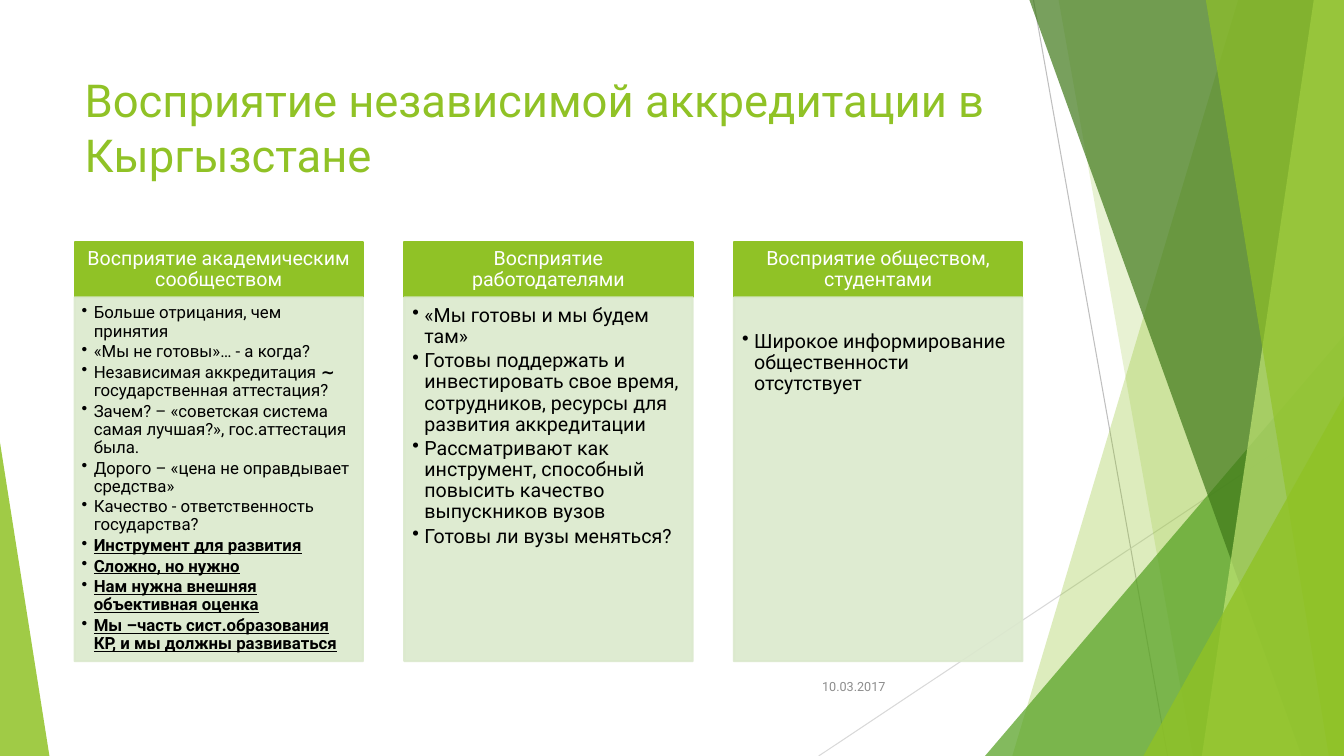
import pptx
import pptx.util
import pptx.dml.color
import pptx.enum.shapes
import pptx.enum.text
import pptx.oxml.ns
import lxml.etree

Inches, Pt = pptx.util.Inches, pptx.util.Pt
SHAPE = pptx.enum.shapes.MSO_SHAPE
ALIGN = pptx.enum.text.PP_ALIGN
ANCHOR = pptx.enum.text.MSO_ANCHOR
qn = pptx.oxml.ns.qn
rgb = pptx.dml.color.RGBColor.from_string

COLORS = {
    "lime": "90C226", "green": "54A021", "dark": "3F7819", "light": "C0E474",
    "panel": "DBE9CD", "white": "FFFFFF", "black": "000000",
    "date": "8C8C8C", "line1": "BFBFBF", "line2": "D9D9D9",
}


def paint(fill, color, alpha=100):
    """Solid fill with opacity in percent."""
    fill.solid()
    fill.fore_color.rgb = rgb(COLORS[color])
    if alpha < 100:
        clr = fill._xPr.find(qn("a:solidFill"))[0]
        lxml.etree.SubElement(clr, qn("a:alpha")).set("val", str(alpha * 1000))


def write(s, paragraphs, size, color, margins, anchor, align=ALIGN.LEFT):
    """Paragraphs are lists of (text, bold, underline) runs."""
    tf = s.text_frame
    tf.word_wrap = True
    tf.vertical_anchor = anchor
    tf.margin_left, tf.margin_top, tf.margin_right, tf.margin_bottom = map(Inches, margins)
    for i, runs in enumerate(paragraphs):
        p = tf.paragraphs[0] if i == 0 else tf.add_paragraph()
        p.alignment = align
        for text, bold, underline in runs:
            r = p.add_run()
            r.text = text
            r.font.name, r.font.size = "Roboto", Pt(size)
            r.font.bold, r.font.underline = bold, underline
            r.font.color.rgb = rgb(COLORS[color])
    return tf


prs = pptx.Presentation()
prs.slide_width, prs.slide_height = Inches(13.33), Inches(7.5)
shapes = prs.slides.add_slide(prs.slide_layouts[6]).shapes

# Thin background lines
for x1, y1, x2, y2, color in [(10.25, 0, 11.58, 7.5, "line1"),
                              (13.33, 4.03, 8.12, 7.5, "line2")]:
    line = shapes.add_connector(pptx.enum.shapes.MSO_CONNECTOR.STRAIGHT,
                                Inches(x1), Inches(y1), Inches(x2), Inches(y2))
    line.line.color.rgb = rgb(COLORS[color])
    line.line.width = Pt(0.75)
    lxml.etree.SubElement(line._element.spPr, qn("a:effectLst"))

# Facets: bands give top and bottom x of the left edge and run to the right side;
# triangles give left, top, width and apex position, and stand on the bottom
facets = [
    ("band", (12.28, 10.04), "lime", 30),
    ("band", (10.5, 11.83), "lime", 20),
    ("triangle", (9.77, 3.33, 3.56, 1), "green", 72),
    ("band", (10.21, 12.91), "dark", 70),
    ("band", (13.03, 11.92), "light", 70),
    ("band", (11.96, 13.18), "lime", 65),
    ("triangle", (11.34, 3.93, 1.99, 1), "lime", 80),
    ("triangle", (0, 4.39, 0.49, 0), "lime", 85),
]
for kind, geometry, color, alpha in facets:
    if kind == "band":
        top_x, bottom_x = geometry
        fb = shapes.build_freeform(Inches(top_x), 0)
        fb.add_line_segments([(Inches(x), Inches(y)) for x, y in
                              [(13.33, 0), (13.33, 7.5), (bottom_x, 7.5)]])
        s = fb.convert_to_shape()
    else:
        x, y, w, apex = geometry
        s = shapes.add_shape(SHAPE.ISOSCELES_TRIANGLE,
                             Inches(x), Inches(y), Inches(w), Inches(7.5 - y))
        s.adjustments[0] = apex
    s.shadow.inherit = False
    s.line.fill.background()
    paint(s.fill, color, alpha)

# Title
s = shapes.add_textbox(Inches(0.74), Inches(0.67), Inches(9.4), Inches(1.44))
write(s, [[("Восприятие независимой аккредитации в Кыргызстане", False, False)]],
      32.4, "lime", (0.1, 0.05, 0.1, 0.05), ANCHOR.TOP)

# Three columns: heading, text size, body margins, plain items, emphasised items
columns = [
    ("Восприятие академическим сообществом", 12, (0.07, 0.07, 0.09, 0.1), [
        "Больше отрицания, чем принятия",
        "«Мы не готовы»… - а когда?",
        "Независимая аккредитация ∼ государственная аттестация?",
        "Зачем? – «советская система самая лучшая?», гос.аттестация была.",
        "Дорого – «цена не оправдывает средства»",
        "Качество - ответственность государства?",
    ], [
        "Инструмент для развития",
        "Сложно, но нужно",
        "Нам нужна внешняя объективная оценка",
        "Мы –часть сист.образования КР, и мы должны развиваться",
    ]),
    ("Восприятие работодателями", 14, (0.08, 0.08, 0.11, 0.12), [
        "«Мы готовы и мы будем там»",
        "Готовы поддержать и инвестировать свое время, сотрудников, ресурсы "
        "для развития аккредитации",
        "Рассматривают как инструмент, способный повысить качество выпускников вузов",
        "Готовы ли вузы меняться?",
    ], []),
    ("Восприятие обществом, студентами", 14, (0.08, 0.34, 0.11, 0.12), [
        "Широкое информирование общественности отсутствует",
    ], []),
]
for i, (heading, size, margins, plain, strong) in enumerate(columns):
    x = 0.74 + 3.27 * i
    head = shapes.add_shape(SHAPE.RECTANGLE, Inches(x), Inches(2.4), Inches(2.86), Inches(0.55))
    body = shapes.add_shape(SHAPE.RECTANGLE, Inches(x), Inches(2.95), Inches(2.86), Inches(3.61))
    for s, color, alpha in [(head, "lime", 100), (body, "panel", 90)]:
        s.shadow.inherit = False
        s.line.width = Pt(1.5)
        paint(s.fill, color, alpha)
        paint(s.line.fill, color, alpha)

    tf = write(head, [[(heading, False, False)]], 14, "white",
               (0.11, 0.06, 0.11, 0.06), ANCHOR.MIDDLE, ALIGN.CENTER)
    tf.paragraphs[0].line_spacing = 0.9

    # The tilde sign is bold inside plain items
    items = []
    for text in plain:
        before, sign, after = text.partition("∼ ")
        items.append([(t, t == sign, False) for t in (before, sign, after) if t])
    items += [[(text, True, True)] for text in strong]
    tf = write(body, items, size, "black", margins, ANCHOR.TOP)
    for p in tf.paragraphs:
        p.line_spacing = 0.9
        p.space_after = Pt(size * 0.15)
        pPr = p._p.get_or_add_pPr()
        pPr.set("marL", str(Inches(0.12)))
        pPr.set("indent", str(-Inches(0.12)))
        lxml.etree.SubElement(pPr, qn("a:buChar")).set("char", "•")

# Date
s = shapes.add_textbox(Inches(7.88), Inches(6.61), Inches(1), Inches(0.4))
write(s, [[("10.03.2017", False, False)]], 9, "date",
      (0.1, 0.05, 0.1, 0.05), ANCHOR.MIDDLE, ALIGN.RIGHT)

prs.save("out.pptx")
